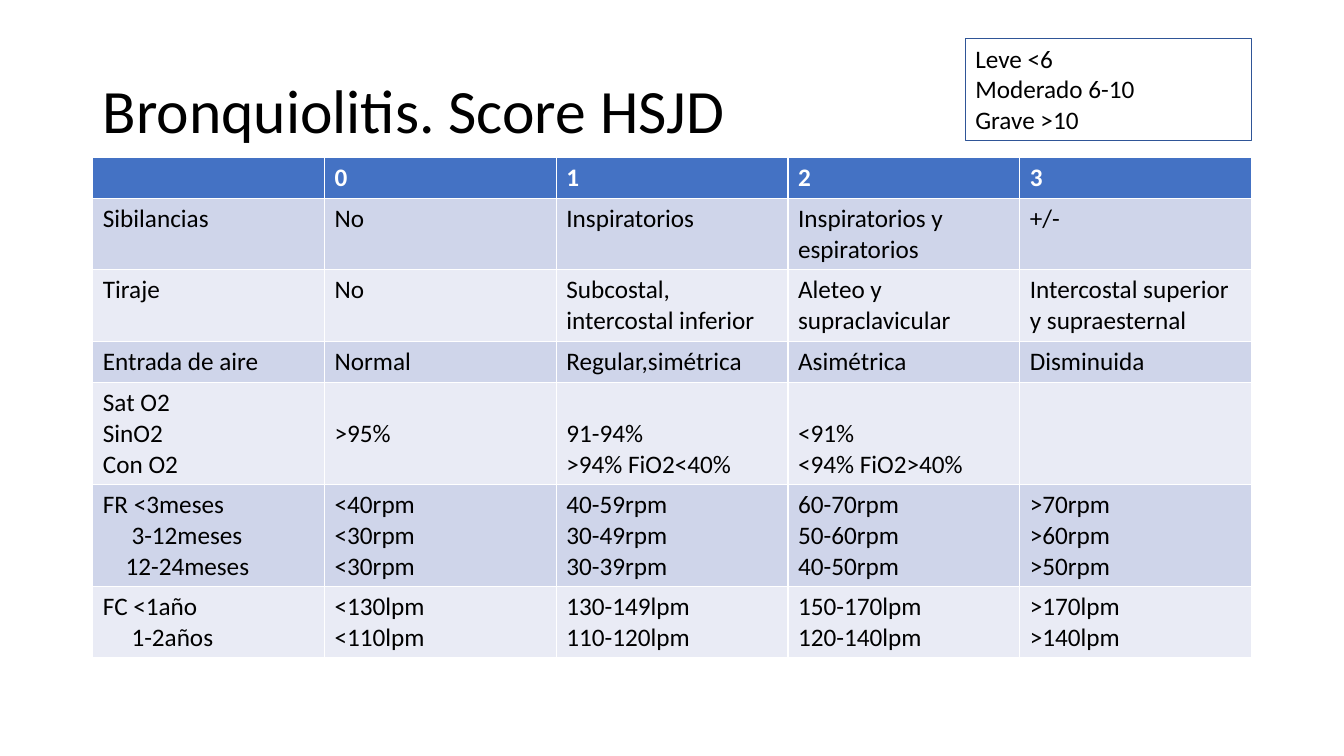
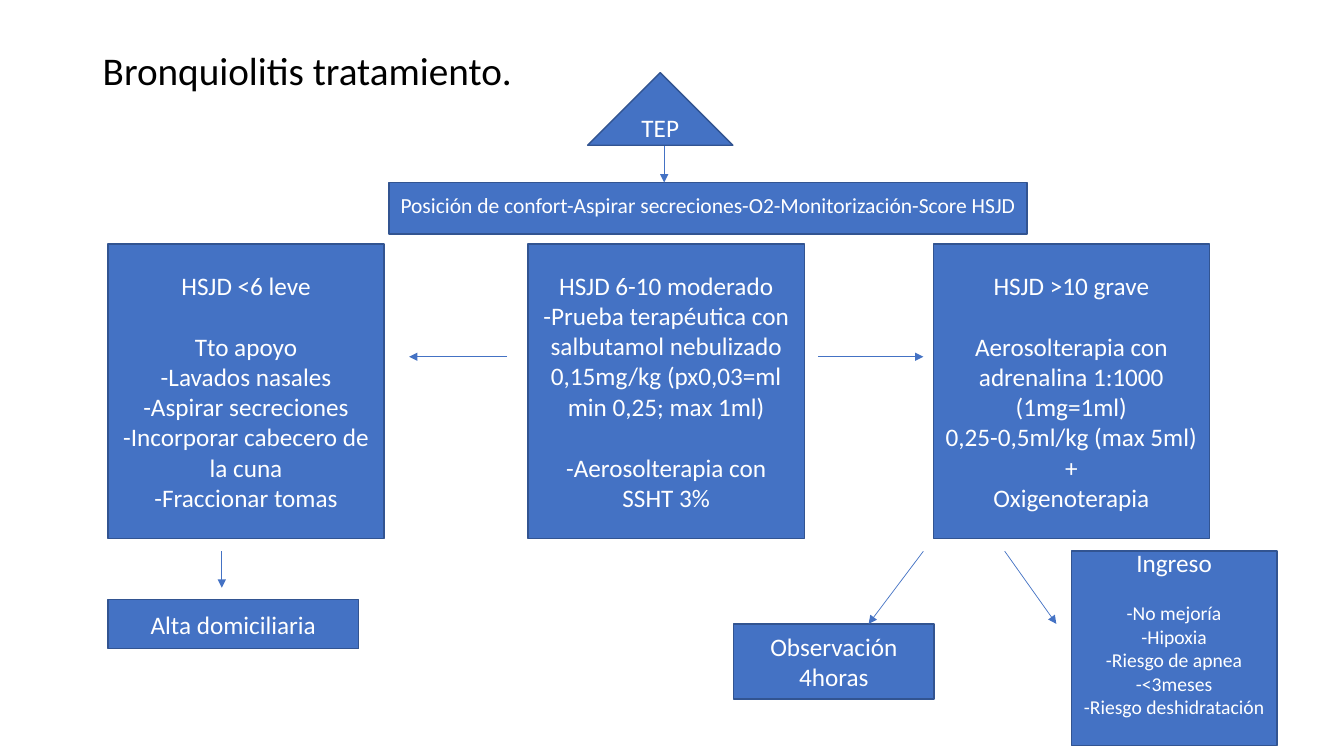
import dataclasses

import pptx
import pptx.dml.color
import pptx.enum.shapes
import pptx.enum.text
import pptx.oxml
import pptx.oxml.ns
import pptx.util

Cm = pptx.util.Cm
Pt = pptx.util.Pt
ALIGN = pptx.enum.text.PP_ALIGN
ANCHOR = pptx.enum.text.MSO_ANCHOR
SHAPE = pptx.enum.shapes.MSO_SHAPE

FONT = "Calibri"
BLACK, WHITE = "000000", "FFFFFF"
BLUE, OUTLINE, LEGEND_LINE = "4472C4", "325491", "2F5597"
BANDS = ("CFD5EA", "E9EBF5")
MARGIN, CONTENT_WIDTH = 2.34, 29.2
INSET_X, INSET_Y = 0.25, 0.13
LINE_HEIGHT = 0.77


def color(value):
    return pptx.dml.color.RGBColor.from_string(value)


@dataclasses.dataclass
class Line:
    text: str
    size: float = 18
    gap: float = 0
    indent: float = 0
    spacing: float = 1


class Slides:
    """Holds the deck style and draws each kind of element on the current slide."""

    def __init__(self):
        self.deck = pptx.Presentation()
        self.deck.slide_width = Cm(33.87)
        self.deck.slide_height = Cm(19.05)
        self.page = None

    def new_page(self, title, top, size):
        self.page = self.deck.slides.add_slide(self.deck.slide_layouts[6])
        box = self.page.shapes.add_textbox(Cm(MARGIN), Cm(top), Cm(CONTENT_WIDTH), Cm(3.68))
        self.add_lines(box.text_frame, [Line(title, size, spacing=0.9)], BLACK)

    def add_lines(self, frame, lines, text_color, align=ALIGN.LEFT, anchor=ANCHOR.MIDDLE, bold=False):
        frame.word_wrap = True
        frame.vertical_anchor = anchor
        for index, line in enumerate(lines):
            if isinstance(line, str):
                line = Line(line)
            para = frame.add_paragraph() if index else frame.paragraphs[0]
            para.alignment = align
            para.line_spacing = line.spacing
            para.space_before = Pt(line.gap)
            if line.indent:
                para._p.get_or_add_pPr().set("marL", str(Cm(line.indent)))
            span = para.add_run()
            span.text = line.text
            span.font.name = FONT
            span.font.size = Pt(line.size)
            span.font.bold = bold
            span.font.color.rgb = color(text_color)

    def outline(self, left, top, width, height, line_color, line_width, kind=SHAPE.RECTANGLE):
        box = self.page.shapes.add_shape(kind, Cm(left), Cm(top), Cm(width), Cm(height))
        box.shadow.inherit = False
        box.fill.background()
        box.line.color.rgb = color(line_color)
        box.line.width = Pt(line_width)
        return box

    def legend(self, left, top, width, height, lines):
        box = self.outline(left, top, width, height, LEGEND_LINE, 0.75)
        self.add_lines(box.text_frame, lines, BLACK, anchor=ANCHOR.TOP)

    def step(self, left, top, width, height, lines, kind=SHAPE.RECTANGLE, inset=INSET_X, bottom=INSET_Y):
        box = self.outline(left, top, width, height, OUTLINE, 1, kind)
        box.fill.solid()
        box.fill.fore_color.rgb = color(BLUE)
        frame = box.text_frame
        frame.margin_left = frame.margin_right = Cm(inset)
        frame.margin_bottom = Cm(bottom)
        self.add_lines(frame, lines, WHITE, ALIGN.CENTER)

    def arrow(self, x1, y1, x2, y2):
        line = self.page.shapes.add_connector(
            pptx.enum.shapes.MSO_CONNECTOR.STRAIGHT, Cm(x1), Cm(y1), Cm(x2), Cm(y2))
        line.line.color.rgb = color(BLUE)
        line.line.width = Pt(0.5)
        properties = line._element.spPr
        namespace = pptx.oxml.ns.nsdecls("a")
        head = pptx.oxml.parse_xml(f'<a:tailEnd {namespace} type="triangle"/>')
        properties.find(pptx.oxml.ns.qn("a:ln")).append(head)
        properties.append(pptx.oxml.parse_xml(f"<a:effectLst {namespace}/>"))

    def table(self, top, rows, lowered):
        count = len(rows[0][1])
        heights = [max(1.04, 2 * INSET_Y + LINE_HEIGHT * lines) for lines, _ in rows]
        table = self.page.shapes.add_table(
            len(rows), count, Cm(MARGIN), Cm(top), Cm(CONTENT_WIDTH), Cm(sum(heights))).table
        for column in table.columns:
            column.width = Cm(CONTENT_WIDTH / count)
        for r, (_, contents) in enumerate(rows):
            table.rows[r].height = Cm(heights[r])
            for c, lines in enumerate(contents):
                cell = table.cell(r, c)
                cell.fill.solid()
                cell.fill.fore_color.rgb = color(BANDS[(r - 1) % 2] if r else BLUE)
                if r == lowered and c:
                    cell.margin_top = Cm(INSET_Y + LINE_HEIGHT)
                if lines:
                    self.add_lines(cell.text_frame, lines, BLACK if r else WHITE,
                                   anchor=ANCHOR.TOP, bold=not r)


SCORE_ROWS = [
    (1, [[], ["0"], ["1"], ["2"], ["3"]]),
    (2, [["Sibilancias"], ["No"], ["Inspiratorios"], ["Inspiratorios y espiratorios"], ["+/-"]]),
    (2, [["Tiraje"], ["No"], ["Subcostal, intercostal inferior"], ["Aleteo y supraclavicular"],
         ["Intercostal superior y supraesternal"]]),
    (1, [["Entrada de aire"], ["Normal"], ["Regular,simétrica"], ["Asimétrica"], ["Disminuida"]]),
    (3, [["Sat O2", "SinO2", "Con O2"], [">95%"], ["91-94%", ">94% FiO2<40%"],
         ["<91%", "<94% FiO2>40%"], []]),
    (3, [["FR <3meses", Line("3-12meses", indent=0.72), Line("12-24meses", indent=0.57)],
         ["<40rpm", "<30rpm", "<30rpm"], ["40-59rpm", "30-49rpm", "30-39rpm"],
         ["60-70rpm", "50-60rpm", "40-50rpm"], [">70rpm", ">60rpm", ">50rpm"]]),
    (2, [["FC <1año", Line("1-2años", indent=0.72)], ["<130lpm", "<110lpm"],
         ["130-149lpm", "110-120lpm"], ["150-170lpm", "120-140lpm"], [">170lpm", ">140lpm"]]),
]

SEVERITIES = [
    (2.72, ["HSJD <6 leve", Line("Tto apoyo", gap=22), "-Lavados nasales", "-Aspirar secreciones",
            "-Incorporar cabecero de la cuna", "-Fraccionar tomas"]),
    (13.31, ["HSJD 6-10 moderado",
             "-Prueba terapéutica con salbutamol nebulizado 0,15mg/kg (px0,03=ml min 0,25; max 1ml)",
             Line("-Aerosolterapia con SSHT 3%", gap=22)]),
    (23.52, ["HSJD >10 grave",
             Line("Aerosolterapia con adrenalina 1:1000 (1mg=1ml) 0,25-0,5ml/kg (max 5ml)", gap=22),
             "+", "Oxigenoterapia"]),
]

ADMISSION = ["Ingreso", Line("-No mejoría", 14, gap=17)] + [
    Line(reason, 14) for reason in ("-Hipoxia", "-Riesgo de apnea", "-<3meses", "-Riesgo deshidratación")]

ARROWS = [
    (16.74, 3.68, 16.74, 4.6),
    (5.59, 13.89, 5.59, 14.81),
    (12.78, 8.99, 10.31, 8.99),
    (20.62, 8.99, 23.27, 8.99),
    (23.27, 13.89, 21.89, 15.72),
    (25.32, 13.89, 26.62, 15.72),
]


def main():
    slides = Slides()

    slides.new_page("Bronquiolitis. Score HSJD", 1.02, 44)
    slides.table(3.96, SCORE_ROWS, lowered=4)
    slides.legend(24.33, 0.97, 7.21, 2.57, ["Leve <6", "Moderado 6-10", "Grave >10"])

    slides.new_page("Bronquiolitis tratamiento.", 0, 28)
    slides.step(14.81, 1.83, 3.66, 1.83, ["TEP"], SHAPE.ISOSCELES_TRIANGLE)
    slides.step(9.8, 4.6, 16.08, 1.3, [Line(
        "Posición de confort-Aspirar secreciones-O2-Monitorización-Score HSJD", 15.4, spacing=0.7)],
        inset=0.1)
    for left, lines in SEVERITIES:
        slides.step(left, 6.15, 6.96, 7.42, lines)
    slides.step(2.72, 15.11, 6.32, 1.24, ["Alta domiciliaria"])
    slides.step(18.49, 15.72, 5.05, 1.9, ["Observación 4horas"])
    slides.step(27, 13.89, 5.18, 4.9, ADMISSION, bottom=INSET_Y + LINE_HEIGHT)
    for ends in ARROWS:
        slides.arrow(*ends)

    slides.deck.save("out.pptx")


if __name__ == "__main__":
    main()
